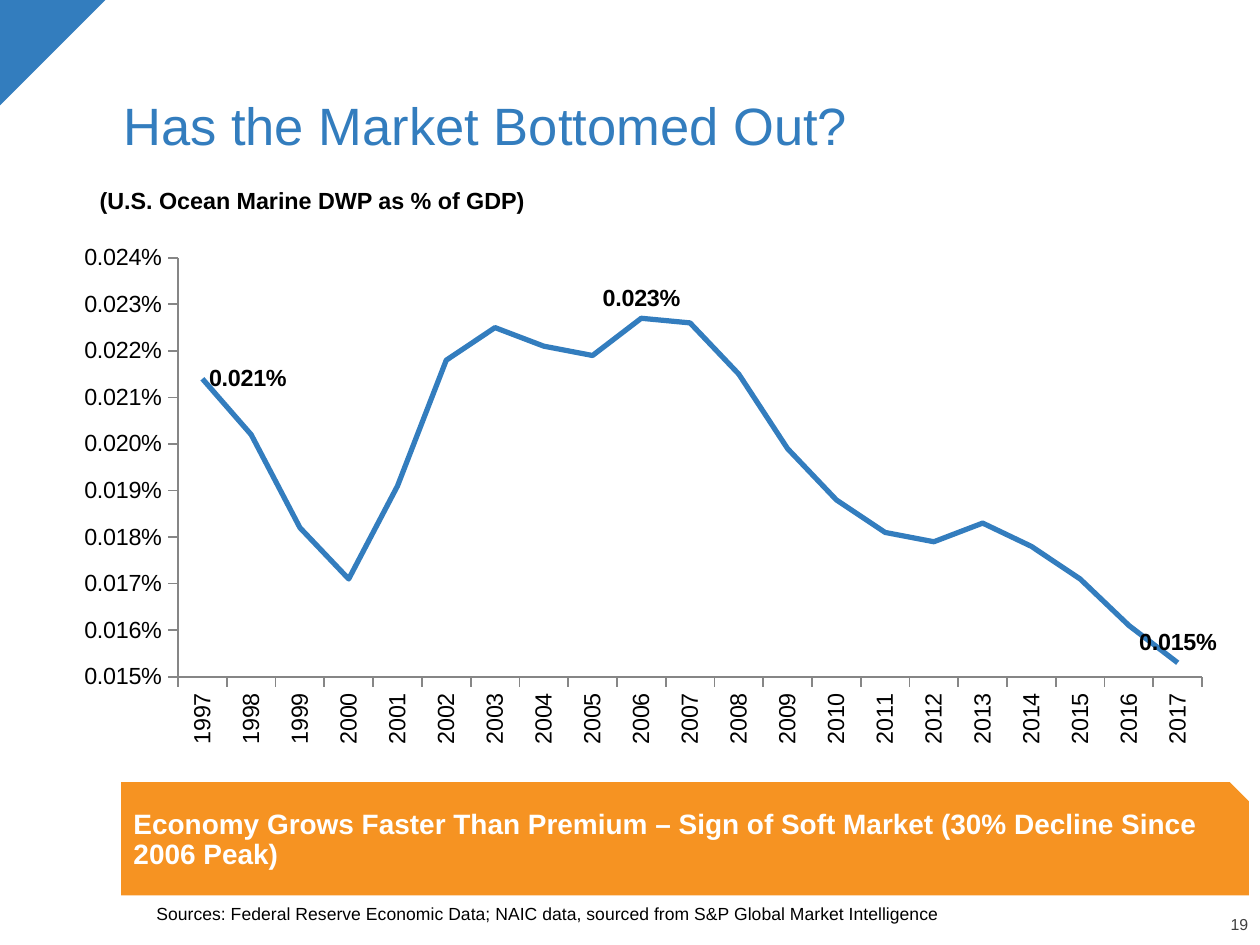
from dataclasses import dataclass

from lxml.etree import SubElement
from pptx import Presentation
from pptx.chart.axis import CategoryAxis, ValueAxis
from pptx.chart.data import CategoryChartData
from pptx.dml.color import RGBColor
from pptx.enum.chart import XL_CHART_TYPE, XL_LABEL_POSITION, XL_TICK_MARK
from pptx.enum.shapes import MSO_SHAPE
from pptx.enum.text import MSO_ANCHOR, PP_ALIGN
from pptx.oxml import parse_xml
from pptx.oxml.ns import nsdecls, qn
from pptx.slide import Slide
from pptx.text.text import Font
from pptx.util import Emu, Pt

PX = 3175
FONT_NAME = "Arial"
BLUE = RGBColor(0x33, 0x7D, 0xBE)
ORANGE = RGBColor(0xF6, 0x93, 0x22)
WHITE = RGBColor(0xFF, 0xFF, 0xFF)
BLACK = RGBColor(0, 0, 0)
DARK_GREY = RGBColor(0x40, 0x40, 0x40)
AXIS_GREY = RGBColor(0x86, 0x86, 0x86)

FIRST_YEAR = 1997
PREMIUM_SHARES = [
    0.000214, 0.000202, 0.000182, 0.000171, 0.000191, 0.000218, 0.000225,
    0.000221, 0.000219, 0.000227, 0.000226, 0.000215, 0.000199, 0.000188,
    0.000181, 0.000179, 0.000183, 0.000178, 0.000171, 0.000161, 0.000153,
]
LABEL_POSITIONS = {
    1997: XL_LABEL_POSITION.RIGHT,
    2006: XL_LABEL_POSITION.ABOVE,
    2017: XL_LABEL_POSITION.ABOVE,
}
PLOT_LAYOUT = {"x": 0.107, "y": 0.063, "w": 0.877, "h": 0.754}


@dataclass(frozen=True)
class Panel:
    left: int
    top: int
    width: int
    height: int
    text: str = ""
    size: float = 10
    color: RGBColor = BLACK
    bold: bool = False
    anchor: MSO_ANCHOR = MSO_ANCHOR.BOTTOM
    align: PP_ALIGN = PP_ALIGN.LEFT
    insets: tuple[int, int, int, int] = (0, 0, 0, 0)
    preset: MSO_SHAPE | None = None
    fill: RGBColor | None = None
    rotation: int = 0


CORNER = Panel(0, 0, 181, 181, preset=MSO_SHAPE.RIGHT_TRIANGLE, fill=BLUE, rotation=90)
PAGE_NUMBER = Panel(2036, 1573, 104, 29, "19", 6.8, DARK_GREY, align=PP_ALIGN.RIGHT)
TITLE = Panel(182, 58, 1849, 225, "Has the Market Bottomed Out?", 22.5, BLUE,
              insets=(29, 14, 29, 14))
SOURCES = Panel(268, 1487, 1814, 98,
                "Sources: Federal Reserve Economic Data; NAIC data, "
                "sourced from S&P Global Market Intelligence", 7.5)
BANNER = Panel(208, 1341, 1933, 194,
               "Economy Grows Faster Than Premium – Sign of Soft Market "
               "(30% Decline Since 2006 Peak)", 12, WHITE, True, MSO_ANCHOR.MIDDLE,
               insets=(21, 10, 21, 21), preset=MSO_SHAPE.SNIP_1_RECTANGLE, fill=ORANGE)
SUBTITLE = Panel(142, 311, 792, 144, "(U.S. Ocean Marine DWP as % of GDP)", 10,
                 bold=True, anchor=MSO_ANCHOR.TOP, insets=(29, 14, 29, 14))


def px(length: int) -> Emu:
    return Emu(length * PX)


def apply_format(target: object, values: dict[str, object]) -> None:
    for name, value in values.items():
        setattr(target, name, value)


def style_font(font: Font, size: float, color: RGBColor, bold: bool = False) -> None:
    apply_format(font, {"name": FONT_NAME, "size": Pt(size), "bold": bold})
    font.color.rgb = color


def draw_panel(page: Slide, panel: Panel) -> None:
    frame = [px(n) for n in (panel.left, panel.top, panel.width, panel.height)]
    if panel.preset is None:
        box = page.shapes.add_textbox(*frame)
    else:
        box = page.shapes.add_shape(panel.preset, *frame)
        box.shadow.inherit = False
        box.fill.solid()
        box.fill.fore_color.rgb = panel.fill
        box.line.fill.background()
        box.rotation = panel.rotation
    if not panel.text:
        return
    left, top, right, bottom = [px(inset) for inset in panel.insets]
    apply_format(box.text_frame, {
        "word_wrap": True, "vertical_anchor": panel.anchor,
        "margin_left": left, "margin_top": top,
        "margin_right": right, "margin_bottom": bottom,
    })
    para = box.text_frame.paragraphs[0]
    apply_format(para, {"alignment": panel.align, "line_spacing": 0.9})
    span = para.add_run()
    span.text = panel.text
    style_font(span.font, panel.size, panel.color, panel.bold)


def style_axis(axis: CategoryAxis | ValueAxis, number_format: str) -> None:
    apply_format(axis, {
        "has_major_gridlines": False,
        "major_tick_mark": XL_TICK_MARK.OUTSIDE,
        "minor_tick_mark": XL_TICK_MARK.NONE,
    })
    apply_format(axis.tick_labels, {
        "number_format": number_format, "number_format_is_linked": False,
    })
    style_font(axis.tick_labels.font, 10, BLACK)
    axis.format.line.color.rgb = AXIS_GREY
    axis.format.line.width = Pt(0.75)


def draw_chart(page: Slide) -> None:
    data = CategoryChartData(number_format="0.000%")
    data.categories = [str(FIRST_YEAR + n) for n in range(len(PREMIUM_SHARES))]
    data.add_series("Series 1", PREMIUM_SHARES)
    chart = page.shapes.add_chart(
        XL_CHART_TYPE.LINE, px(91), px(382), px(2002), px(953), data
    ).chart
    apply_format(chart, {"has_legend": False, "has_title": False})
    style_font(chart.font, 18, BLACK)
    chart.plots[0].vary_by_categories = False
    style_axis(chart.category_axis, "0")
    style_axis(chart.value_axis, "0.000%")
    apply_format(chart.value_axis, {
        "minimum_scale": 0.00015, "maximum_scale": 0.00024, "major_unit": 0.00001,
    })
    year_text = chart.category_axis._element.find(qn("c:txPr"))
    year_text.find(qn("a:bodyPr")).set("rot", "-5400000")

    series = chart.plots[0].series[0]
    series.smooth = False
    series.format.line.color.rgb = BLUE
    series.format.line.width = Pt(2.25)
    series.data_labels.show_value = False
    for year, position in LABEL_POSITIONS.items():
        label = series.points[year - FIRST_YEAR].data_label
        style_font(label.font, 10, BLACK, True)
        label.position = position

    plot_area = chart._chartSpace.find(".//" + qn("c:plotArea"))
    for layout in plot_area.findall(qn("c:layout")):
        plot_area.remove(layout)
    layout = parse_xml(f"<c:layout {nsdecls('c')}><c:manualLayout/></c:layout>")
    settings = {"layoutTarget": "inner", "xMode": "edge", "yMode": "edge"}
    for name, value in (settings | PLOT_LAYOUT).items():
        SubElement(layout[0], qn(f"c:{name}")).set("val", str(value))
    plot_area.insert(0, layout)


def main() -> None:
    deck = Presentation()
    apply_format(deck, {"slide_width": px(2160), "slide_height": px(1620)})
    page = deck.slides.add_slide(deck.slide_layouts[6])
    draw_chart(page)
    for panel in (CORNER, PAGE_NUMBER, TITLE, SOURCES, BANNER, SUBTITLE):
        draw_panel(page, panel)
    deck.save("out.pptx")


if __name__ == "__main__":
    main()
